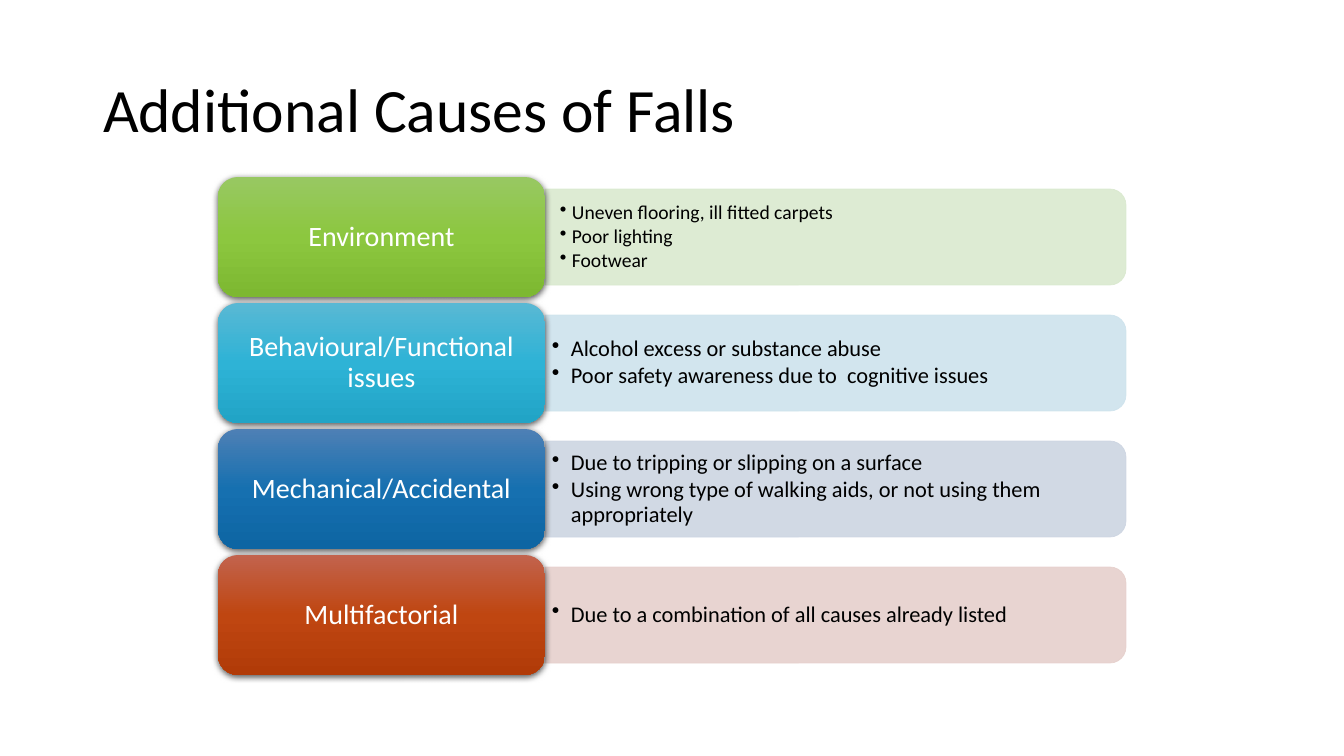
from copy import deepcopy

from lxml.etree import SubElement
from pptx import Presentation
from pptx.dml.color import RGBColor
from pptx.enum.shapes import MSO_SHAPE
from pptx.enum.text import MSO_ANCHOR, PP_ALIGN
from pptx.oxml.ns import qn
from pptx.util import Emu, Pt

EMU_PER_PX = 914400 / 100.8
FONT = "Calibri"
BLACK = RGBColor(0x00, 0x00, 0x00)
WHITE = RGBColor(0xFF, 0xFF, 0xFF)
GREENS = [RGBColor(0x98, 0xC8, 0x62), RGBColor(0x8C, 0xC7, 0x3F), RGBColor(0x7D, 0xB8, 0x31)]
CYANS = [RGBColor(0x59, 0xB8, 0xD4), RGBColor(0x2E, 0xB3, 0xD6), RGBColor(0x21, 0xA4, 0xC6)]
BLUES = [RGBColor(0x4E, 0x80, 0xB5), RGBColor(0x16, 0x70, 0xB0), RGBColor(0x0D, 0x65, 0xA3)]
REDS = [RGBColor(0xC2, 0x63, 0x4D), RGBColor(0xBF, 0x46, 0x11), RGBColor(0xB1, 0x3B, 0x08)]
PALE_GREEN = RGBColor(0xDA, 0xE9, 0xCF)
PALE_CYAN = RGBColor(0xCE, 0xE3, 0xED)
PALE_BLUE = RGBColor(0xCD, 0xD5, 0xE2)
PALE_RED = RGBColor(0xE6, 0xD0, 0xCC)

FIRST_CENTER, ROW_PITCH = 237, 126
LABEL_LEFT, LABEL_WIDTH, LABEL_HEIGHT = 218, 327, 120
PANEL_LEFT, PANEL_WIDTH, PANEL_HEIGHT = 545, 581, 96
LIST_WIDTH, LIST_HEIGHT = 576, 87

CAUSES = [
    ("Environment", GREENS, PALE_GREEN, 14, 12, (15, 7),
     ["Uneven flooring, ill fitted carpets", "Poor lighting", "Footwear"]),
    ("Behavioural/Functional issues", CYANS, PALE_CYAN, 16, 19, (7, 3),
     ["Alcohol excess or substance abuse",
      "Poor safety awareness due to  cognitive issues"]),
    ("Mechanical/Accidental", BLUES, PALE_BLUE, 16, 19, (7, 3),
     ["Due to tripping or slipping on a surface",
      "Using wrong type of walking aids, or not using them appropriately"]),
    ("Multifactorial", REDS, PALE_RED, 16, 19, (7, 3),
     ["Due to a combination of all causes already listed"]),
]


def px(length):
    """Turn a length in px into EMU."""
    return Emu(round(length * EMU_PER_PX))


def box(center_x, center_y, width, height):
    """Return left, top, width and height in EMU around a center."""
    return px(center_x - width / 2), px(center_y - height / 2), px(width), px(height)


def format_paragraph(paragraph, size, color, alignment=PP_ALIGN.LEFT):
    """Set line spacing, alignment and run font of a paragraph."""
    paragraph.alignment = alignment
    paragraph.line_spacing = 0.9
    for run in paragraph.runs:
        run.font.name = FONT
        run.font.size = Pt(size)
        run.font.color.rgb = color


def set_frame(text_frame, inset_x, inset_y):
    """Wrap and center a text frame vertically with the given insets."""
    text_frame.word_wrap = True
    text_frame.vertical_anchor = MSO_ANCHOR.MIDDLE
    text_frame.margin_left = text_frame.margin_right = px(inset_x)
    text_frame.margin_top = text_frame.margin_bottom = px(inset_y)


def add_title(slide, text):
    """Fill and place the title placeholder."""
    title = slide.shapes.title
    title.left, title.top, title.width, title.height = px(93), px(40), px(1159), px(146)
    title.text_frame.text = text
    title.text_frame.vertical_anchor = MSO_ANCHOR.MIDDLE
    format_paragraph(title.text_frame.paragraphs[0], 44, BLACK)


def add_panel(slide, center_y, color):
    """Add a pale panel with rounded right corners."""
    panel = slide.shapes.add_shape(
        MSO_SHAPE.ROUND_2_SAME_RECTANGLE,
        *box(PANEL_LEFT + PANEL_WIDTH / 2, center_y, PANEL_HEIGHT, PANEL_WIDTH))
    panel.rotation = 90
    panel.shadow.inherit = False
    panel.fill.solid()
    panel.fill.fore_color.rgb = color
    panel.line.color.rgb = color
    panel.line.width = Pt(0.5)
    for color_element in panel._element.spPr.iter(qn("a:srgbClr")):
        SubElement(color_element, qn("a:alpha"), val="90000")


def add_list(slide, center_y, items, size, indent, insets):
    """Add the bulleted text of a panel."""
    text_box = slide.shapes.add_textbox(
        *box(PANEL_LEFT + LIST_WIDTH / 2, center_y, LIST_WIDTH, LIST_HEIGHT))
    text_frame = text_box.text_frame
    text_frame.text = "\n".join(items)
    set_frame(text_frame, *insets)
    for paragraph in text_frame.paragraphs:
        properties = paragraph._p.get_or_add_pPr()
        properties.set("marL", str(px(indent)))
        properties.set("indent", str(-px(indent)))
        SubElement(properties, qn("a:buChar"), char="•")
        format_paragraph(paragraph, size, BLACK)
        paragraph.space_after = Pt(0.15 * size)


def add_shadow(shape):
    """Give a shape a soft shadow below it."""
    shape.shadow.inherit = False
    effects = shape._element.spPr.find(qn("a:effectLst"))
    shadow = SubElement(effects, qn("a:outerShdw"), blurRad=str(Pt(4.5)),
                        dist=str(Pt(1.5)), dir="5400000", rotWithShape="0")
    color = SubElement(shadow, qn("a:srgbClr"), val=str(BLACK))
    SubElement(color, qn("a:alpha"), val="63000")


def add_label(slide, center_y, text, colors):
    """Add a rounded label with a three-stop vertical gradient."""
    label = slide.shapes.add_shape(
        MSO_SHAPE.ROUNDED_RECTANGLE,
        *box(LABEL_LEFT + LABEL_WIDTH / 2, center_y, LABEL_WIDTH, LABEL_HEIGHT))
    label.fill.gradient()
    label.fill.gradient_angle = 270
    stop_list = label._element.spPr.find(qn("a:gradFill")).find(qn("a:gsLst"))
    stop_list.append(deepcopy(stop_list[0]))
    for index, (stop, color) in enumerate(zip(label.fill.gradient_stops, colors)):
        stop.position = index / 2
        stop.color.rgb = color
    label.line.fill.background()
    add_shadow(label)
    label.text_frame.text = text
    set_frame(label.text_frame, 8, 4)
    format_paragraph(label.text_frame.paragraphs[0], 20, WHITE, PP_ALIGN.CENTER)


def main():
    """Build the slide and save it."""
    presentation = Presentation()
    presentation.slide_width, presentation.slide_height = px(1344), px(756)
    slide = presentation.slides.add_slide(presentation.slide_layouts[5])
    add_title(slide, "Additional Causes of Falls")
    for row, (name, colors, pale, size, indent, insets, items) in enumerate(CAUSES):
        center_y = FIRST_CENTER + row * ROW_PITCH
        add_panel(slide, center_y, pale)
        add_list(slide, center_y, items, size, indent, insets)
        add_label(slide, center_y, name, colors)
    presentation.save("out.pptx")


if __name__ == "__main__":
    main()
